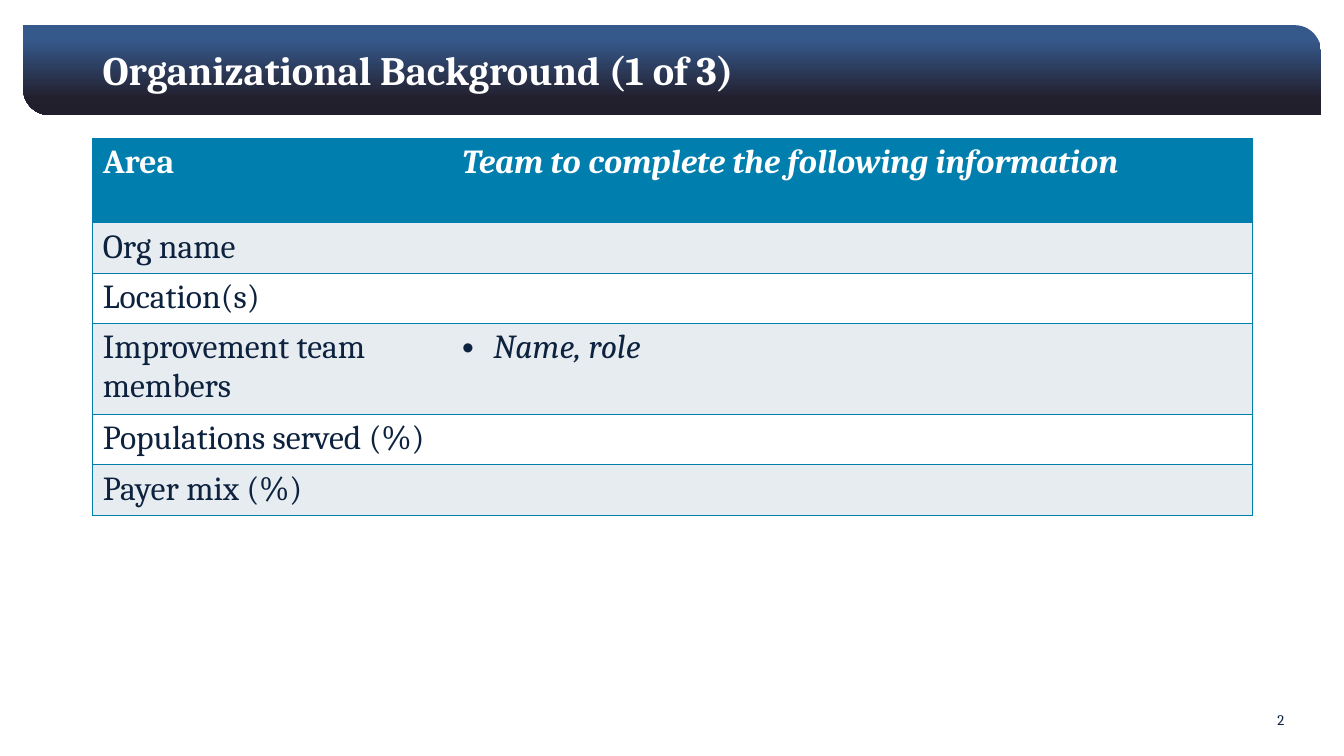
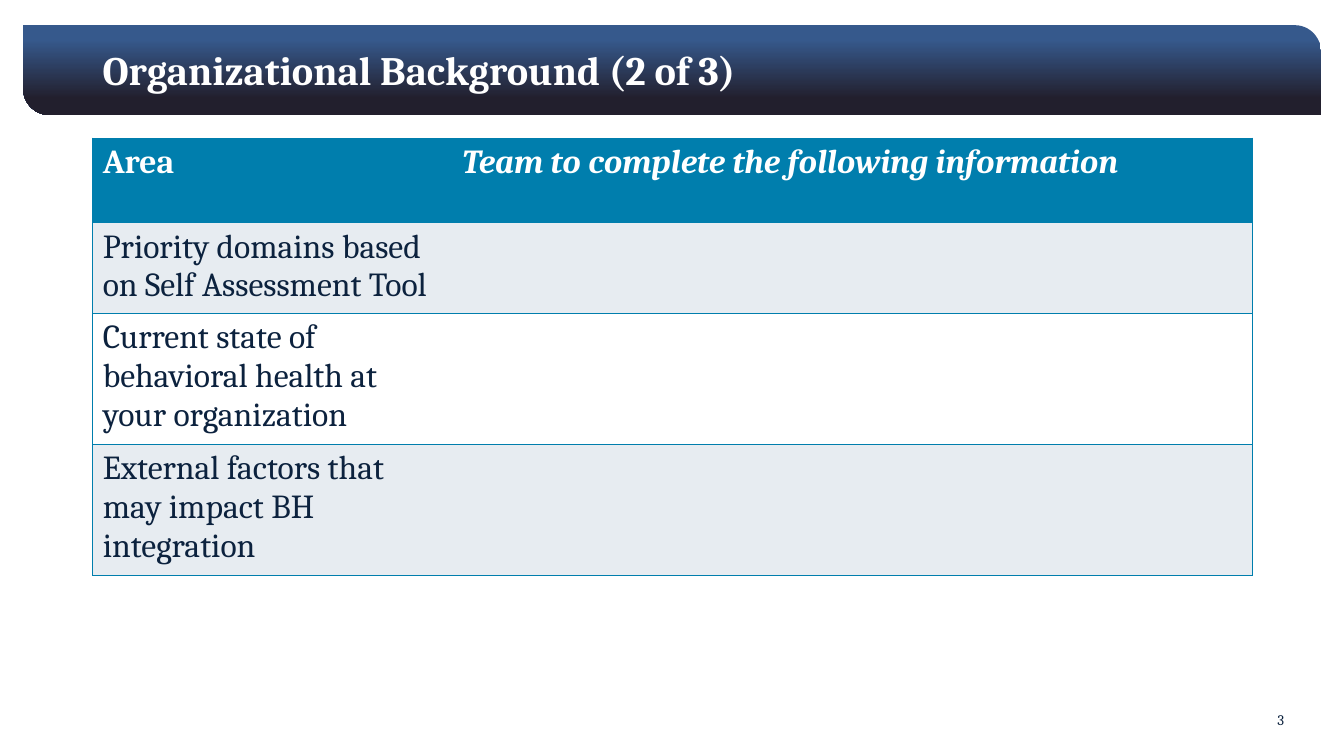
import pptx
import pptx.util
import pptx.dml.color
import pptx.enum.shapes
import pptx.enum.text
import pptx.oxml
import pptx.oxml.ns

WIDTH = pptx.util.Inches(13.33)
HEIGHT = pptx.util.Inches(7.5)
FONT = "Cambria"
COLORS = {
    "band_top": "36598C",
    "band_bottom": "221F2D",
    "ink": "0C223E",
    "accent": "007EAD",
    "stripe": "E7ECF1",
    "white": "FFFFFF",
}
BAND = (1.73, 3.33, 96.55, 11.87)
TITLE = (6.9, 5.6, 86.27, 7.87)
NUMBER = (94.3, 93.33, 4.5, 3.73)
TABLE = (6.9, 18.27, 86.27)
HEADER_ROW, BODY_ROW = 11.2, 6.27
AREA_SHARE = 0.31
HEADER = ("Area", "Team to complete the following information")
PAGES = [
    (2, "Organizational Background (1 of 3)", [
        ("Org name", ""),
        ("Location(s)", ""),
        ("Improvement team members", "Name, role"),
        ("Populations served (%)", ""),
        ("Payer mix (%)", ""),
    ]),
    (3, "Organizational Background (2 of 3)", [
        ("Priority domains based on Self Assessment Tool", ""),
        ("Current state of behavioral health at your organization", ""),
        ("External factors that may impact BH integration", ""),
    ]),
]


def across(percent):
    """Turn a percentage of the slide width into a length."""
    return round(WIDTH * percent / 100)


def down(percent):
    """Turn a percentage of the slide height into a length."""
    return round(HEIGHT * percent / 100)


def place(box):
    """Turn a box in slide percentages into left, top, width and height."""
    left, top, width, height = box
    return across(left), down(top), across(width), down(height)


def color(name):
    """Look up a named colour."""
    return pptx.dml.color.RGBColor.from_string(COLORS[name])


def write(paragraph, words, size, ink, bold=False, italic=False):
    """Add one styled run to a paragraph."""
    run = paragraph.add_run()
    run.text = words
    run.font.name = FONT
    run.font.size = pptx.util.Pt(size)
    run.font.bold = bold
    run.font.italic = italic
    run.font.color.rgb = color(ink)


def add_band(slide, box):
    """Draw the gradient band with two opposite rounded corners."""
    band = slide.shapes.add_shape(
        pptx.enum.shapes.MSO_SHAPE.ROUND_2_DIAG_RECTANGLE, *place(box))
    band.shadow.inherit = False
    band.adjustments[0] = 0
    band.adjustments[1] = 0.29
    band.line.fill.background()
    band.fill.gradient()
    band.fill.gradient_angle = 270
    stops = ((0.16, "band_top"), (0.82, "band_bottom"))
    for stop, (position, name) in zip(band.fill.gradient_stops, stops):
        stop.position = position
        stop.color.rgb = color(name)


def add_label(slide, box, words, size, ink, bold=False, spacing=1.0,
              anchor=pptx.enum.text.MSO_ANCHOR.TOP):
    """Place one line of text in a box."""
    frame = slide.shapes.add_textbox(*place(box)).text_frame
    frame.word_wrap = True
    frame.vertical_anchor = anchor
    frame.paragraphs[0].line_spacing = spacing
    write(frame.paragraphs[0], words, size, ink, bold)


def add_bullet(paragraph):
    """Give a paragraph a hanging round bullet."""
    properties = paragraph._p.get_or_add_pPr()
    indent = pptx.util.Inches(0.31)
    properties.set("marL", str(indent))
    properties.set("indent", str(-indent))
    namespace = pptx.oxml.ns.nsdecls("a")
    properties.append(pptx.oxml.parse_xml(
        f'<a:buFont {namespace} typeface="Arial"/>'))
    properties.append(pptx.oxml.parse_xml(
        f'<a:buChar {namespace} char="•"/>'))


def set_borders(cell, open_side):
    """Rule every side of a cell except the open one."""
    properties = cell._tc.get_or_add_tcPr()
    namespace = pptx.oxml.ns.nsdecls("a")
    for index, side in enumerate("LRTB"):
        paint = "<a:noFill/>" if side == open_side else (
            f'<a:solidFill><a:srgbClr val="{COLORS["accent"]}"/></a:solidFill>')
        properties.insert(index, pptx.oxml.parse_xml(
            f'<a:ln{side} {namespace} w="12700">{paint}</a:ln{side}>'))


def add_area_table(slide, box, entries):
    """Build the two-column table of areas and answers."""
    left, top, width = box
    rows = [HEADER, *entries]
    height = HEADER_ROW + BODY_ROW * len(entries)
    table = slide.shapes.add_table(
        len(rows), 2, *place((left, top, width, height))).table
    table.horz_banding = False
    table.columns[0].width = across(width * AREA_SHARE)
    table.columns[1].width = across(width * (1 - AREA_SHARE))
    for row, texts in enumerate(rows):
        header = row == 0
        table.rows[row].height = down(HEADER_ROW if header else BODY_ROW)
        backdrop = "accent" if header else ("white", "stripe")[row % 2]
        for column, words in enumerate(texts):
            cell = table.cell(row, column)
            cell.fill.solid()
            cell.fill.fore_color.rgb = color(backdrop)
            set_borders(cell, "RL"[column])
            if not words:
                continue
            paragraph = cell.text_frame.paragraphs[0]
            if column == 1 and not header:
                add_bullet(paragraph)
            write(paragraph, words, 24, "white" if header else "ink",
                  bold=header, italic=column == 1)


def add_page(deck, number, title, entries):
    """Add one background slide with its band, title, number and table."""
    slide = deck.slides.add_slide(deck.slide_layouts[6])
    add_band(slide, BAND)
    add_label(slide, NUMBER, str(number), 10.5, "ink")
    add_label(slide, TITLE, title, 28.8, "white", bold=True, spacing=0.9,
              anchor=pptx.enum.text.MSO_ANCHOR.MIDDLE)
    add_area_table(slide, TABLE, entries)


def main():
    """Build and save the presentation."""
    deck = pptx.Presentation()
    deck.slide_width = WIDTH
    deck.slide_height = HEIGHT
    for page in PAGES:
        add_page(deck, *page)
    deck.save("out.pptx")


if __name__ == "__main__":
    main()
